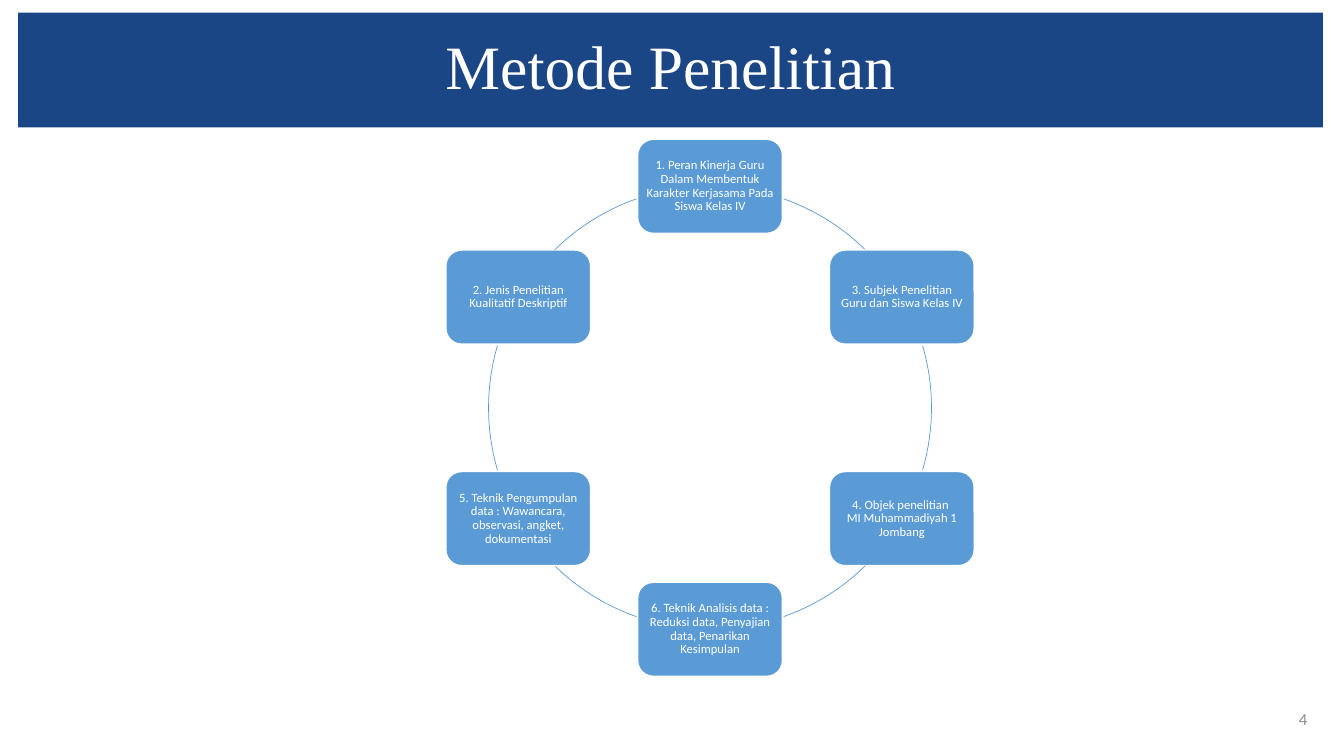
from math import cos, radians, sin

from pptx import Presentation
from pptx.dml.color import RGBColor
from pptx.enum.shapes import MSO_SHAPE as Shape
from pptx.enum.text import MSO_ANCHOR as Anchor, MSO_AUTO_SIZE as Fit, PP_ALIGN as Align
from pptx.util import Pt

NAVY = RGBColor(0x1B, 0x46, 0x85)
BLUE = RGBColor(0x5B, 0x9B, 0xD5)
GRAY = RGBColor(0x8C, 0x8C, 0x8C)
WHITE = RGBColor(0xFF, 0xFF, 0xFF)

# Ring centre and radius, card size
MID_X, MID_Y, RADIUS = 507.2, 291.3, 158.2
CARD_W, CARD_H = 103.4, 67.2

# Cards clockwise from the top, each with the span of the arc after it
STEPS = [
    ("1. Peran Kinerja Guru Dalam Membentuk Karakter Kerjasama Pada Siswa Kelas IV", 289.4, 314.5),
    ("3. Subjek Penelitian Guru dan Siswa Kelas IV", 343.7, 16.3),
    ("4. Objek penelitian \vMI Muhammadiyah 1 Jombang", 45.5, 70.6),
    ("6. Teknik Analisis data : Reduksi data, Penyajian data, Penarikan Kesimpulan", 109.4, 134.5),
    ("5. Teknik Pengumpulan data : Wawancara, observasi, angket, dokumentasi", 163.7, 196.3),
    ("2. Jenis Penelitian Kualitatif Deskriptif", 225.5, 250.6),
]


def write(frame, text, size, color, align, face="Calibri"):
    frame.text = text
    frame.word_wrap = True
    frame.auto_size = Fit.NONE
    frame.vertical_anchor = Anchor.MIDDLE
    para = frame.paragraphs[0]
    para.alignment = align
    para.font.name = face
    para.font.size = Pt(size)
    para.font.color.rgb = color
    return para


deck = Presentation()
deck.slide_width, deck.slide_height = Pt(960), Pt(540)
slide = deck.slides.add_slide(deck.slide_layouts[5])
shapes = slide.shapes

# Title band
title = shapes.title
title.left, title.top, title.width, title.height = Pt(13), Pt(9), Pt(932), Pt(82)
title.fill.solid()
title.fill.fore_color.rgb = NAVY
para = write(title.text_frame, "Metode Penelitian", 44, WHITE, Align.CENTER, "Times New Roman")
para.line_spacing = 0.9

# Cycle of cards and arcs
for step, (text, start, end) in enumerate(STEPS):
    turn = radians(60 * step - 90)
    left = MID_X + RADIUS * cos(turn) - CARD_W / 2
    top = MID_Y + RADIUS * sin(turn) - CARD_H / 2
    card = shapes.add_shape(Shape.ROUNDED_RECTANGLE, Pt(left), Pt(top), Pt(CARD_W), Pt(CARD_H))
    card.shadow.inherit = False
    card.fill.solid()
    card.fill.fore_color.rgb = BLUE
    card.line.color.rgb = WHITE
    card.line.width = Pt(1)
    frame = card.text_frame
    frame.margin_left = frame.margin_right = Pt(2.7)
    frame.margin_top = frame.margin_bottom = Pt(2.7)
    write(frame, text, 9, WHITE, Align.CENTER).line_spacing = 0.9

    arc = shapes.add_shape(Shape.ARC, Pt(MID_X - RADIUS), Pt(MID_Y - RADIUS),
                           Pt(2 * RADIUS), Pt(2 * RADIUS))
    arc.shadow.inherit = False
    arc.fill.background()
    arc.line.color.rgb = BLUE
    arc.line.width = Pt(0.5)
    # Arc angles count 60000 per degree, adjustments 100000 per unit
    arc.adjustments[0] = start * 0.6
    arc.adjustments[1] = end * 0.6

# Page number
page = shapes.add_textbox(Pt(900), Pt(499), Pt(41), Pt(28.8))
write(page.text_frame, "4", 12, GRAY, Align.RIGHT)

deck.save("out.pptx")
